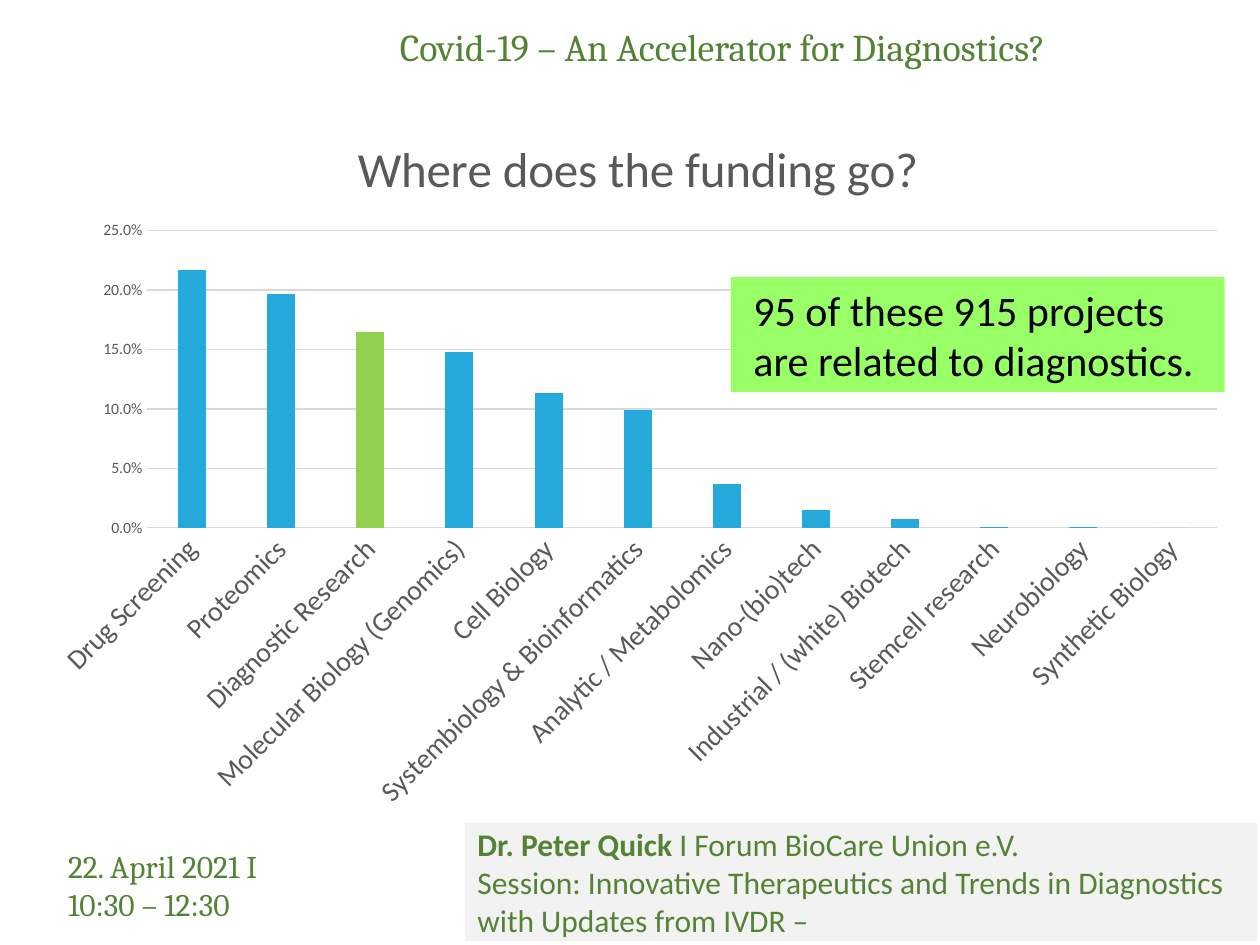
"""Build the slide about where diagnostics funding goes."""
from dataclasses import dataclass

from lxml.etree import SubElement
from pptx import Presentation
from pptx.chart.data import CategoryChartData
from pptx.dml.color import RGBColor
from pptx.enum.chart import XL_CHART_TYPE, XL_TICK_MARK
from pptx.enum.shapes import MSO_SHAPE
from pptx.enum.text import MSO_ANCHOR, MSO_AUTO_SIZE, PP_ALIGN
from pptx.oxml.ns import qn
from pptx.util import Inches, Pt

COLORS = {
    "heading": "548335", "panel": "F2F2F2", "callout": "99FF66", "black": "000000",
    "axis": "595959", "grid": "D9D9D9", "bar": "26AADB", "highlight": "92D050",
}
FUNDING = {
    "Drug Screening": 0.217,
    "Proteomics": 0.197,
    "Diagnostic Research": 0.165,
    "Molecular Biology (Genomics)": 0.148,
    "Cell Biology": 0.113,
    "Systembiology & Bioinformatics": 0.099,
    "Analytic / Metabolomics": 0.037,
    "Nano-(bio)tech": 0.015,
    "Industrial / (white) Biotech": 0.007,
    "Stemcell research": 0.001,
    "Neurobiology": 0.001,
    "Synthetic Biology": 0,
}


@dataclass
class Box:
    """Position and size in inches."""
    left: float
    top: float
    width: float
    height: float

    def lengths(self) -> tuple:
        return tuple(Inches(v) for v in (self.left, self.top, self.width, self.height))


@dataclass
class Panel:
    """A filled rectangle with left-aligned paragraphs made of (text, bold) runs."""
    box: Box
    fill: str
    color: str
    size: float
    margin: float
    paragraphs: list


CHART = Box(0.28, 0.91, 9.57, 5.62)
PLOT = Box(1.17, 1.83, 8.49, 2.36)
CHART_TITLE = Box(2.77, 1.01, 0, 0)
PANELS = [
    Panel(Box(3.69, 6.53, 6.29, 0.94), "panel", "heading", 18, 0.1, [
        [("Dr. Peter Quick ", True), ("I Forum BioCare Union e.V.", False)],
        [("Session: Innovative Therapeutics and Trends in Diagnostics "
          "with Updates from IVDR –", False)],
    ]),
    Panel(Box(5.8, 2.2, 3.92, 0.91), "callout", "black", 24, 0.18, [
        [("95 of these 915 projects are related to diagnostics.", False)],
    ]),
]


def rgb(name: str) -> RGBColor:
    return RGBColor.from_string(COLORS[name])


def set_font(font, name: str, size: float, color: str) -> None:
    font.name, font.size = name, Pt(size)
    font.color.rgb = rgb(color)


def add_panel(slide, panel: Panel) -> None:
    shape = slide.shapes.add_shape(MSO_SHAPE.RECTANGLE, *panel.box.lengths())
    shape.shadow.inherit = False
    shape.fill.solid()
    shape.fill.fore_color.rgb = rgb(panel.fill)
    shape.line.fill.background()
    frame = shape.text_frame
    frame.word_wrap = True
    frame.vertical_anchor = MSO_ANCHOR.MIDDLE
    frame.margin_left, frame.margin_right = Inches(panel.margin), Inches(0.1)
    for index, runs in enumerate(panel.paragraphs):
        paragraph = frame.add_paragraph() if index else frame.paragraphs[0]
        paragraph.alignment = PP_ALIGN.LEFT
        set_font(paragraph.font, "Calibri", panel.size, panel.color)
        for text, bold in runs:
            run = paragraph.add_run()
            run.text, run.font.bold = text, bold


def add_heading(slide) -> None:
    title = slide.shapes.title
    title.left, title.top, title.width, title.height = Box(2.24, 0.14, 6.99, 0.52).lengths()
    frame = title.text_frame
    frame.text = "Covid-19 – An Accelerator for Diagnostics?"
    frame.auto_size = MSO_AUTO_SIZE.NONE
    frame.vertical_anchor = MSO_ANCHOR.TOP
    paragraph = frame.paragraphs[0]
    paragraph.alignment = PP_ALIGN.CENTER
    set_font(paragraph.font, "Cambria", 21.6, "heading")


def add_date(slide) -> None:
    frame = slide.shapes.add_textbox(*Box(0.54, 6.72, 1.7, 0.31).lengths()).text_frame
    frame.word_wrap = True
    frame.margin_left = frame.margin_right = frame.margin_top = frame.margin_bottom = 0
    frame.text = "22. April 2021 I 10:30 – 12:30"
    set_font(frame.paragraphs[0].font, "Cambria", 18, "heading")


def set_layout(parent, index: int, box: Box) -> None:
    """Place a chart part by its slide position, as fractions of the chart."""
    for old in parent.findall(qn("c:layout")):
        parent.remove(old)
    layout = SubElement(parent, qn("c:layout"))
    parent.insert(index, layout)
    values = {"xMode": "edge", "yMode": "edge",
              "x": (box.left - CHART.left) / CHART.width,
              "y": (box.top - CHART.top) / CHART.height}
    if box.width:
        values = {"layoutTarget": "inner", **values,
                  "w": box.width / CHART.width, "h": box.height / CHART.height}
    manual = SubElement(layout, qn("c:manualLayout"))
    for tag, value in values.items():
        SubElement(manual, qn(f"c:{tag}")).set("val", str(value))


def add_funding_chart(slide) -> None:
    data = CategoryChartData(number_format="0.0%")
    data.categories = list(FUNDING)
    data.add_series("Series 1", list(FUNDING.values()))
    chart = slide.shapes.add_chart(XL_CHART_TYPE.COLUMN_CLUSTERED, *CHART.lengths(), data).chart
    set_font(chart.font, "Calibri", 10, "black")
    chart.has_legend = False
    chart.has_title = True
    title_frame = chart.chart_title.text_frame
    title_frame.text = "Where does the funding go?"
    title_font = title_frame.paragraphs[0].font
    set_font(title_font, "Calibri", 28, "axis")
    title_font.bold = False

    plot = chart.plots[0]
    plot.gap_width, plot.overlap, plot.vary_by_categories = 219, -27, False
    series = plot.series[0]
    highlight = list(FUNDING).index("Diagnostic Research")
    for part, color in ((series, "bar"), (series.points[highlight], "highlight")):
        part.format.fill.solid()
        part.format.fill.fore_color.rgb = rgb(color)

    categories, values = chart.category_axis, chart.value_axis
    for axis, size in ((categories, 16), (values, 9)):
        axis.major_tick_mark = axis.minor_tick_mark = XL_TICK_MARK.NONE
        set_font(axis.tick_labels.font, "Calibri", size, "axis")
    values.minimum_scale, values.maximum_scale, values.major_unit = 0, 0.25, 0.05
    values.tick_labels.number_format = "0.0%"
    values.tick_labels.number_format_is_linked = False
    values.format.line.fill.background()
    for line in (categories.format.line, values.major_gridlines.format.line):
        line.color.rgb, line.width = rgb("grid"), Pt(0.75)
    label_body = categories._element.find(qn("c:txPr")).find(qn("a:bodyPr"))
    label_body.set("rot", "-2700000")
    label_body.set("vert", "horz")

    set_layout(chart.chart_title._element, 1, CHART_TITLE)
    set_layout(chart._chartSpace.find(".//" + qn("c:plotArea")), 0, PLOT)


def main() -> None:
    presentation = Presentation()
    presentation.slide_width, presentation.slide_height = Inches(10), Inches(7.5)
    slide = presentation.slides.add_slide(presentation.slide_layouts[5])
    add_heading(slide)
    add_date(slide)
    add_funding_chart(slide)
    for panel in PANELS:
        add_panel(slide, panel)
    presentation.save("out.pptx")


if __name__ == "__main__":
    main()
